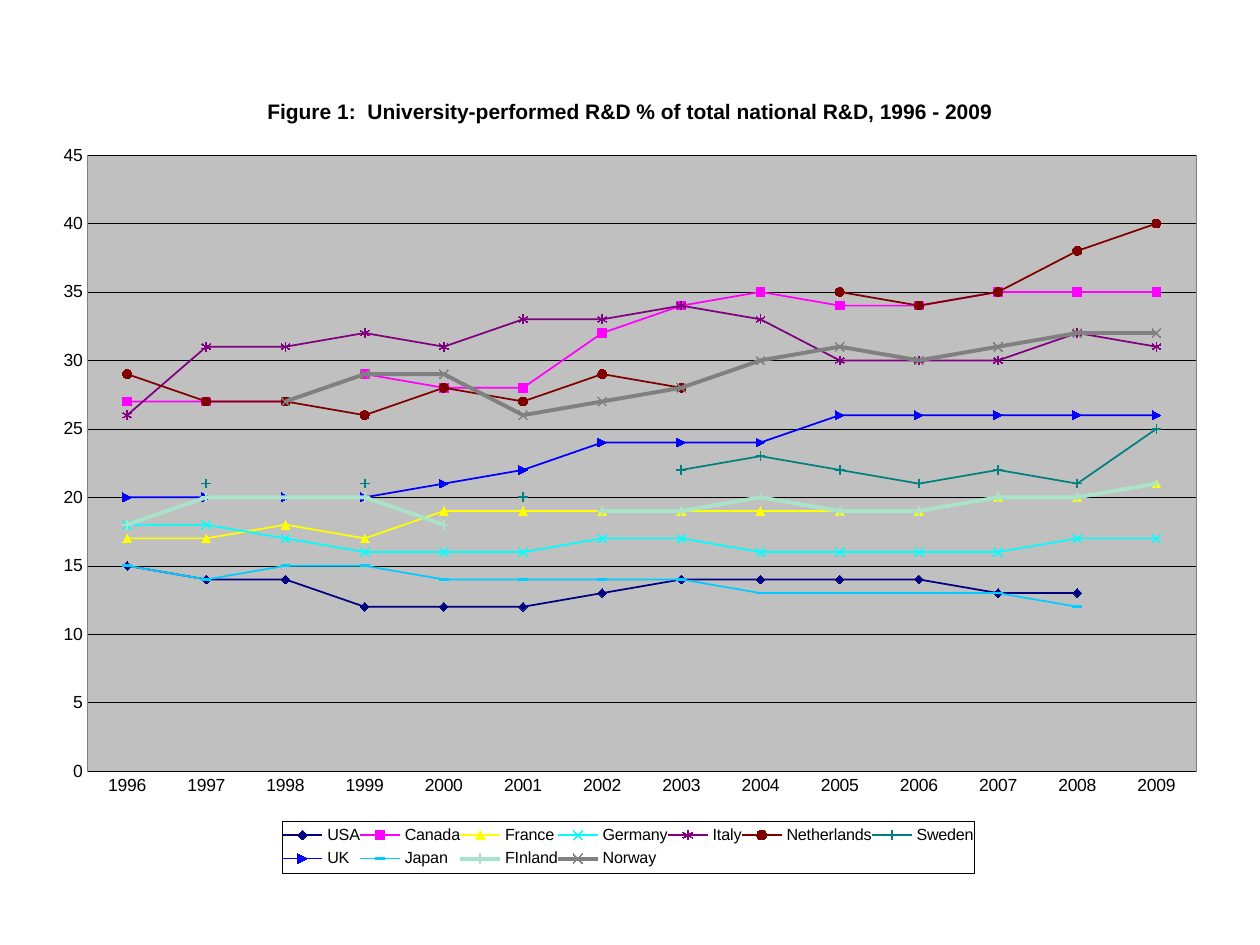
"""Build a slide with a line chart of university R&D shares by country."""
from dataclasses import dataclass
from typing import Optional

from pptx import Presentation
from pptx.chart.data import CategoryChartData
from pptx.dml.color import RGBColor
from pptx.enum.chart import XL_CHART_TYPE, XL_LEGEND_POSITION, XL_MARKER_STYLE, XL_TICK_MARK
from pptx.oxml import parse_xml
from pptx.oxml.ns import nsdecls, qn
from pptx.oxml.xmlchemy import OxmlElement
from pptx.util import Inches, Pt

LINE_MARKERS = XL_CHART_TYPE.LINE_MARKERS
BOTTOM = XL_LEGEND_POSITION.BOTTOM
NO_TICK = XL_TICK_MARK.NONE
MARK = XL_MARKER_STYLE
FILLED = (MARK.DIAMOND, MARK.SQUARE, MARK.TRIANGLE, MARK.CIRCLE)
TITLE = "Figure 1:  University-performed R&D % of total national R&D, 1996 - 2009"
YEARS = [str(year) for year in range(1996, 2010)]


@dataclass(frozen=True)
class Theme:
    """Colours, type sizes and line widths."""
    font: str = "Arial"
    ink: str = "000000"
    paper: str = "FFFFFF"
    plot: str = "C0C0C0"
    border: str = "808080"
    title: float = 12
    axis: float = 10
    legend: float = 9.2
    hairline: float = 0.25
    marker: int = 5


@dataclass(frozen=True)
class Country:
    """One line of the chart."""
    name: str
    color: str
    marker: MARK
    values: tuple
    width: float = 1


THEME = Theme()
COUNTRIES = (
    Country("USA", "000080", MARK.DIAMOND,
            (15, 14, 14, 12, 12, 12, 13, 14, 14, 14, 14, 13, 13, None)),
    Country("Canada", "FF00FF", MARK.SQUARE,
            (27, 27, 27, 29, 28, 28, 32, 34, 35, 34, 34, 35, 35, 35)),
    Country("France", "FFFF00", MARK.TRIANGLE,
            (17, 17, 18, 17, 19, 19, 19, 19, 19, 19, 19, 20, 20, 21)),
    Country("Germany", "00FFFF", MARK.X,
            (18, 18, 17, 16, 16, 16, 17, 17, 16, 16, 16, 16, 17, 17)),
    Country("Italy", "800080", MARK.STAR,
            (26, 31, 31, 32, 31, 33, 33, 34, 33, 30, 30, 30, 32, 31)),
    Country("Netherlands", "800000", MARK.CIRCLE,
            (29, 27, 27, 26, 28, 27, 29, 28, None, 35, 34, 35, 38, 40)),
    Country("Sweden", "008080", MARK.PLUS,
            (None, 21, None, 21, None, 20, None, 22, 23, 22, 21, 22, 21, 25)),
    Country("UK", "0000FF", MARK.DOT,
            (20, 20, 20, 20, 21, 22, 24, 24, 24, 26, 26, 26, 26, 26)),
    Country("Japan", "00CCFF", MARK.DASH,
            (15, 14, 15, 15, 14, 14, 14, 14, 13, 13, 13, 13, 12, None)),
    Country("FInland", "AAE2CA", MARK.PLUS,
            (18, 20, 20, 20, 18, None, 19, 19, 20, 19, 19, 20, 20, 21), 2.25),
    Country("Norway", "808080", MARK.X,
            (None, None, 27, 29, 29, 26, 27, 28, 30, 31, 30, 31, 32, 32), 2.25),
)


def set_font(font, size: float, bold: bool = False) -> None:
    """Apply the theme's typeface at a size."""
    for key, value in {"name": THEME.font, "size": Pt(size), "bold": bold}.items():
        setattr(font, key, value)
    font.color.rgb = RGBColor.from_string(THEME.ink)


def set_line(line, color: str, width: float) -> None:
    """Give a line a colour and a width in points."""
    line.color.rgb = RGBColor.from_string(color)
    line.width = Pt(width)


def place(element, index: int, x: float, y: float,
          w: Optional[float] = None, h: Optional[float] = None) -> None:
    """Lay out a chart part by percentages of the chart's size."""
    for old in element.findall(qn("c:layout")):
        element.remove(old)
    layout, manual = OxmlElement("c:layout"), OxmlElement("c:manualLayout")
    layout.append(manual)
    shares = {key: value / 100 for key, value in zip("xywh", (x, y, w, h)) if value is not None}
    rules = {"xMode": "edge", "yMode": "edge", **shares}
    if element.tag == qn("c:plotArea"):
        rules = {"layoutTarget": "inner", **rules}
    for key, value in rules.items():
        node = OxmlElement(f"c:{key}")
        node.set("val", str(value))
        manual.append(node)
    element.insert(index, layout)


def box_format(fill: str, line: str):
    """Return shape properties for a filled and outlined chart part."""
    return parse_xml(
        f'<c:spPr {nsdecls("c", "a")}><a:solidFill><a:srgbClr val="{fill}"/></a:solidFill>'
        f'<a:ln w="{Pt(THEME.hairline)}"><a:solidFill><a:srgbClr val="{line}"/></a:solidFill>'
        "</a:ln></c:spPr>")


def style_series(series, country: Country) -> None:
    """Format one country's line and markers."""
    series.smooth = False
    set_line(series.format.line, country.color, country.width)
    marker = series.marker
    marker.style, marker.size = country.marker, THEME.marker
    set_line(marker.format.line, country.color, 1)
    if country.marker in FILLED:
        marker.format.fill.solid()
        marker.format.fill.fore_color.rgb = RGBColor.from_string(country.color)
    else:
        marker.format.fill.background()


def style_axes(chart) -> None:
    """Format both axes and the gridlines."""
    value, category = chart.value_axis, chart.category_axis
    for axis in (value, category):
        axis.major_tick_mark = axis.minor_tick_mark = NO_TICK
        set_font(axis.tick_labels.font, THEME.axis)
    for key, number in {"minimum_scale": 0, "maximum_scale": 45, "major_unit": 5}.items():
        setattr(value, key, number)
    value.has_major_gridlines = True
    set_line(value.major_gridlines.format.line, THEME.ink, THEME.hairline)
    set_line(category.format.line, THEME.ink, THEME.hairline)
    value.format.line.fill.background()


def style_frame(chart) -> None:
    """Format the title, legend and plot area."""
    chart.has_title = True
    tf = chart.chart_title.text_frame
    tf.text = TITLE
    set_font(tf.paragraphs[0].runs[0].font, THEME.title, True)
    chart.has_legend = True
    legend = chart.legend
    legend.position, legend.include_in_layout = BOTTOM, False
    set_font(legend.font, THEME.legend)
    root = chart._chartSpace
    title, box, plot = (root.find(".//" + qn(f"c:{tag}")) for tag in ("title", "legend", "plotArea"))
    place(title, 1, 18.9, 2.9)
    place(box, 1, 20.5, 93.5, 58.6, 6.5)
    place(plot, 0, 4, 10.4, 93.9, 76.9)
    box.find(qn("c:overlay")).addnext(box_format(THEME.paper, THEME.ink))
    plot.append(box_format(THEME.plot, THEME.border))


def main() -> None:
    """Create the presentation."""
    prs = Presentation()
    prs.slide_width, prs.slide_height = Inches(10), Inches(7.5)
    s = prs.slides.add_slide(prs.slide_layouts[6])
    data = CategoryChartData()
    data.categories = YEARS
    for country in COUNTRIES:
        data.add_series(country.name, country.values)
    frame = (Inches(n) for n in (0.32, 0.57, 9.37, 6.36))
    chart = s.shapes.add_chart(LINE_MARKERS, *frame, data).chart
    set_font(chart.font, THEME.axis)
    chart.plots[0].vary_by_categories = False
    for series, country in zip(chart.plots[0].series, COUNTRIES):
        style_series(series, country)
    style_axes(chart)
    style_frame(chart)
    prs.save("out.pptx")


if __name__ == "__main__":
    main()
